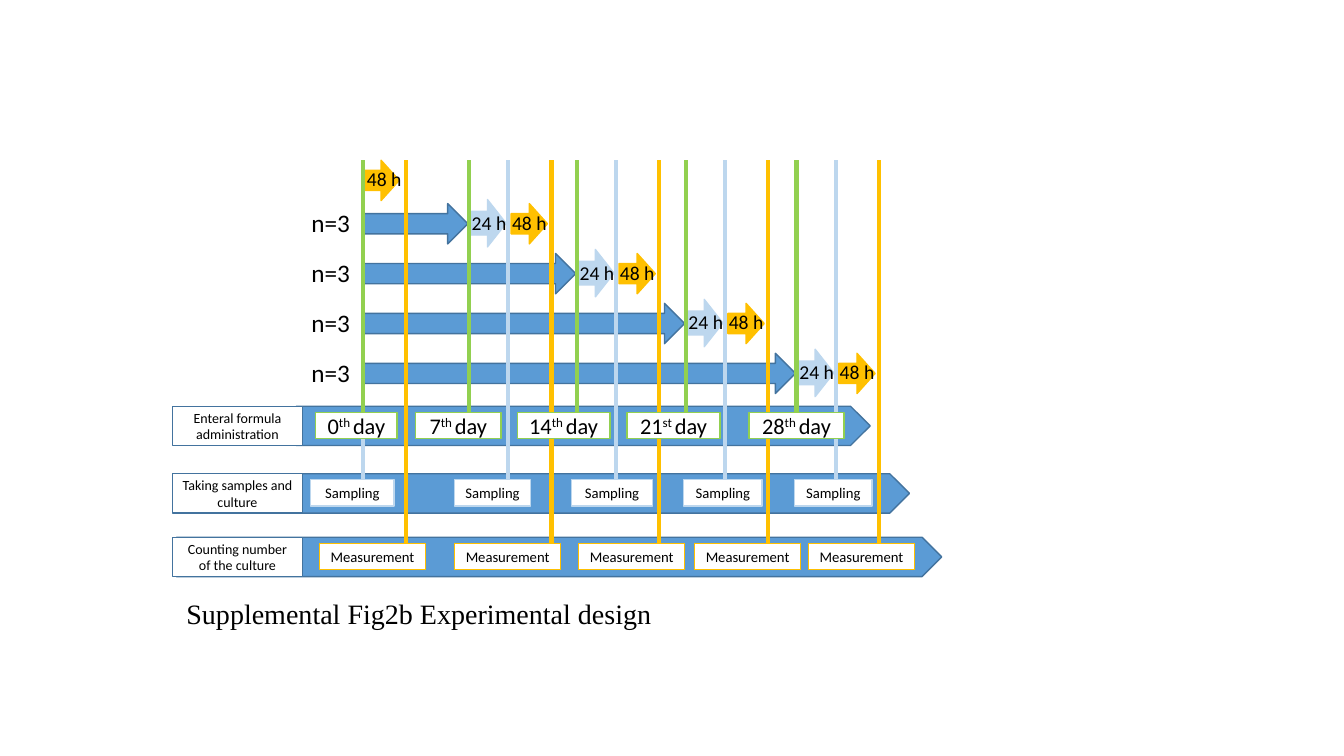
from dataclasses import dataclass

from lxml import etree
from pptx import Presentation
from pptx.dml.color import RGBColor
from pptx.enum.shapes import MSO_CONNECTOR, MSO_SHAPE
from pptx.enum.text import MSO_ANCHOR, PP_ALIGN
from pptx.oxml.ns import qn
from pptx.util import Inches, Pt

RECTANGLE, ARROW = MSO_SHAPE.RECTANGLE, MSO_SHAPE.RIGHT_ARROW
STRAIGHT = MSO_CONNECTOR.STRAIGHT
MIDDLE, TOP = MSO_ANCHOR.MIDDLE, MSO_ANCHOR.TOP
LEFT, CENTER = PP_ALIGN.LEFT, PP_ALIGN.CENTER


@dataclass(frozen=True)
class Theme:
    feeding: str = "5B9BD5"
    outline: str = "43739E"
    day: str = "92D050"
    sampling: str = "BDD7EE"
    counting: str = "FFC000"
    white: str = "FFFFFF"
    black: str = "000000"
    sans: str = "Calibri"
    serif: str = "Times New Roman"
    label: float = 10
    step: float = 10.5
    hours: float = 14
    date: float = 16
    group: float = 18
    caption: float = 20


THEME = Theme()

# Group size, position of the feeding end, hours of culture before counting
GROUPS = [
    ("", 3.60, ""),
    ("n=3", 4.65, "24 h"),
    ("n=3", 5.72, "24 h"),
    ("n=3", 6.80, "24 h"),
    ("n=3", 7.90, "24 h"),
]
COUNT_HOURS = "48 h"
CAPTION = "Supplemental Fig2b Experimental design"

# Lane label, top, arrow left, arrow tip, colour, text size, boxes (left, width, runs)
LANES = [
    ("Enteral formula administration", 4.03, 2.94, 8.63, THEME.day, THEME.date, [
        (3.13, 0.81, ("0", "th ", "day")),
        (4.12, 0.85, ("7", "th ", "day")),
        (5.13, 0.92, ("14", "th ", "day")),
        (6.22, 0.92, ("21", "st ", "day")),
        (7.43, 0.94, ("28", "th ", "day"))]),
    ("Taking samples and culture", 4.70, 2.94, 9.02, THEME.sampling, THEME.step, [
        (left, width, ("Sampling",)) for left, width in
        [(3.08, 0.83), (4.51, 0.75), (5.67, 0.80), (6.78, 0.78), (7.88, 0.77)]]),
    ("Counting number of the culture", 5.33, 1.75, 9.34, THEME.counting, THEME.step, [
        (left, 1.05, ("Measurement",)) for left in (3.17, 4.51, 5.74, 6.89, 8.02)]),
]

START = GROUPS[0][1]
FIRST_ROW, SECOND_ROW, ROW_STEP = 1.59, 2.02, 0.495
CULTURE_SPAN, COUNT_SPAN = 0.39, 0.43
ARROW_HEIGHT, LANE_HEIGHT, BOX_HEIGHT = 0.40, 0.39, 0.26
BOX_INSET, LINE_INSET = 0.06, 0.13
LABEL_LEFT, LABEL_WIDTH = 1.71, 1.29


def color(value):
    return RGBColor.from_string(value)


def write(frame, runs, size, font=THEME.sans, align=LEFT, anchor=TOP):
    """Fill a text frame with one paragraph; the second run is superscript."""
    frame.vertical_anchor = anchor
    para = frame.paragraphs[0]
    para.alignment = align
    para.font.size, para.font.name = Pt(size), font
    para.font.color.rgb = color(THEME.black)
    for index, words in enumerate(runs):
        span = para.add_run()
        span.text = words
        if index == 1:
            span._r.get_or_add_rPr().set("baseline", "30000")


def add_block(page, kind, left, top, width, height, fill, line, weight=1):
    block = page.shapes.add_shape(
        kind, Inches(left), Inches(top), Inches(width), Inches(height))
    block.shadow.inherit = False
    if fill:
        block.fill.solid()
        block.fill.fore_color.rgb = color(fill)
    else:
        block.fill.background()
    block.line.color.rgb = color(line)
    block.line.width = Pt(weight)
    return block


def add_words(page, words, left, top, width, height, size):
    box = page.shapes.add_textbox(
        Inches(left), Inches(top), Inches(width), Inches(height))
    box.text_frame.word_wrap = False
    write(box.text_frame, (words,), size)


def add_marker(page, across, bottom, stroke):
    """Draw a vertical time line down into a lane."""
    marker = page.shapes.add_connector(
        STRAIGHT, Inches(across), Inches(FIRST_ROW), Inches(across), Inches(bottom))
    marker.line.color.rgb = color(stroke)
    marker.line.width = Pt(3)
    etree.SubElement(marker._element.spPr, qn("a:effectLst"))


def row_top(index):
    return SECOND_ROW + (index - 1) * ROW_STEP if index else FIRST_ROW


def moments(group):
    """Positions of feeding end, sampling and counting of a group."""
    _, day, culture = group
    sampled = day + CULTURE_SPAN if culture else day
    return day, sampled, sampled + COUNT_SPAN


def draw_lanes(page):
    for label, top, left, tip, *_ in LANES:
        lane = add_block(page, ARROW, left, top, tip - left, LANE_HEIGHT,
                         THEME.feeding, THEME.outline)
        lane.adjustments[0], lane.adjustments[1] = 1, 0.5
        name = add_block(page, RECTANGLE, LABEL_LEFT, top, LABEL_WIDTH, LANE_HEIGHT,
                         THEME.white, THEME.outline)
        write(name.text_frame, (label,), THEME.label, align=CENTER, anchor=MIDDLE)


def draw_group_arrows(page):
    for index, group in enumerate(GROUPS):
        size, _, culture = group
        day, sampled, _ = moments(group)
        top = row_top(index)
        if culture:
            add_words(page, size, 2.99, top - 0.01, 0.59, 0.4, THEME.group)
            add_block(page, ARROW, START, top, day - START - 0.01, ARROW_HEIGHT,
                      THEME.feeding, THEME.outline)
            add_block(page, ARROW, day, top - 0.04, 0.37, 0.47,
                      THEME.sampling, THEME.sampling)
        gap = 0.03 if culture else 0
        add_block(page, ARROW, sampled + gap, top, 0.36, ARROW_HEIGHT,
                  THEME.counting, THEME.counting)


def draw_markers(page):
    for step in (1, 2, 0):
        _, top, _, _, stroke, *_ = LANES[step]
        for group in GROUPS:
            add_marker(page, moments(group)[step], top + LINE_INSET, stroke)


def draw_lane_boxes(page):
    for _, top, _, _, stroke, size, boxes in LANES:
        for left, width, runs in boxes:
            box = add_block(page, RECTANGLE, left, top + BOX_INSET, width, BOX_HEIGHT,
                            THEME.white, stroke)
            write(box.text_frame, runs, size, align=CENTER, anchor=MIDDLE)


def draw_hours(page):
    for index, group in enumerate(GROUPS):
        day, sampled, _ = moments(group)
        top = row_top(index) + 0.02
        if group[2]:
            add_words(page, group[2], day - 0.07, top, 0.55, 0.34, THEME.hours)
        add_words(page, COUNT_HOURS, sampled - 0.06, top, 0.55, 0.34, THEME.hours)


def main():
    deck = Presentation()
    deck.slide_width, deck.slide_height = Inches(13.33), Inches(7.5)
    page = deck.slides.add_slide(deck.slide_layouts[6])
    draw_lanes(page)
    caption = add_block(page, RECTANGLE, 1.75, 5.87, 6.45, 0.48, None, THEME.white, 0.75)
    write(caption.text_frame, (CAPTION,), THEME.caption, THEME.serif)
    draw_group_arrows(page)
    draw_markers(page)
    draw_lane_boxes(page)
    draw_hours(page)
    deck.save("out.pptx")


if __name__ == "__main__":
    main()
